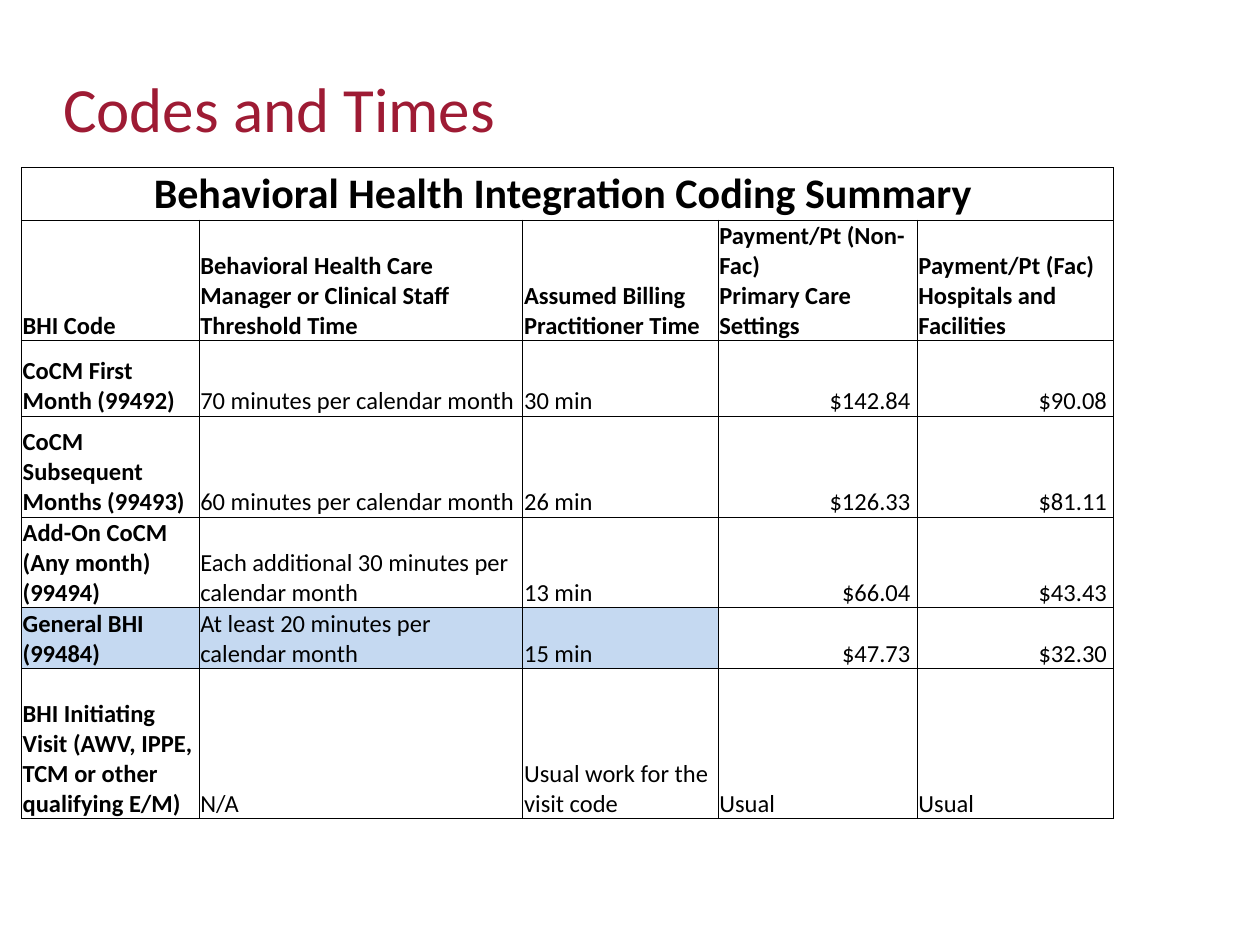
from dataclasses import dataclass

from lxml import etree
from pptx import Presentation
from pptx.dml.color import RGBColor
from pptx.enum import text
from pptx.oxml import ns
from pptx import util as u


@dataclass(frozen=True)
class Theme:
    font: str = "Calibri"
    title_color: str = "9E1B34"
    ink: str = "000000"
    highlight: str = "C5D9F1"
    title_size: int = 36
    caption_size: int = 24
    body_size: int = 14
    border: float = 0.5


THEME = Theme()
SLIDE_WIDTH, SLIDE_HEIGHT = 10, 7.5
TITLE_BOX = (0.5, 0.45, 9, 0.8)
TABLE_BOX = (0.17, 1.33, 8.67, 4.83)
COLUMN_WIDTHS = (1.41, 2.57, 1.55, 1.58, 1.56)
ROW_HEIGHTS = (0.35, 0.89, 0.6, 0.8, 0.6, 0.4, 1.19)
HIGHLIGHTED_CODE = "General BHI (99484)"

CAPTION = "Behavioral Health Integration Coding Summary "
HEADINGS = (
    "BHI Code",
    "Behavioral Health Care Manager or Clinical Staff Threshold Time",
    "Assumed Billing Practitioner Time",
    "Payment/Pt (Non-Fac) \vPrimary Care Settings",
    "Payment/Pt (Fac) \vHospitals and Facilities",
)
CODES = (
    ("CoCM First Month (99492)", "70 minutes per calendar month",
     "30 min", "$142.84 ", "$90.08 "),
    ("CoCM Subsequent Months (99493)", "60 minutes per calendar month",
     "26 min", "$126.33 ", "$81.11 "),
    ("Add-On CoCM (Any month) (99494)",
     "Each additional 30 minutes per calendar month",
     "13 min", "$66.04 ", "$43.43 "),
    (HIGHLIGHTED_CODE, "At least 20 minutes per calendar month",
     "15 min", "$47.73 ", "$32.30 "),
    ("BHI Initiating Visit (AWV, IPPE, TCM or other qualifying E/M)", "N/A",
     "Usual work for the visit code", "Usual", "Usual"),
)


def format_text(frame, size, color, bold=False, align=text.PP_ALIGN.LEFT):
    for para in frame.paragraphs:
        para.alignment = align
        for span in para.runs:
            span.font.name = THEME.font
            span.font.size = u.Pt(size)
            span.font.bold = bold
            span.font.color.rgb = RGBColor.from_string(color)


def add_borders(cell):
    properties = cell._tc.get_or_add_tcPr()
    for side in ("lnL", "lnR", "lnT", "lnB"):
        line = etree.SubElement(properties, ns.qn(f"a:{side}"),
                                w=str(u.Pt(THEME.border)))
        fill = etree.SubElement(line, ns.qn("a:solidFill"))
        etree.SubElement(fill, ns.qn("a:srgbClr"), val=THEME.ink)


def style_cell(cell, fill=None):
    cell.margin_left = cell.margin_right = cell.margin_top = u.Inches(0.01)
    cell.margin_bottom = 0
    cell.vertical_anchor = text.MSO_ANCHOR.BOTTOM
    add_borders(cell)
    if fill:
        cell.fill.solid()
        cell.fill.fore_color.rgb = RGBColor.from_string(fill)
    else:
        cell.fill.background()


def place_title(page, box):
    title = page.shapes.title
    title.left, title.top, title.width, title.height = map(u.Inches, box)
    frame = title.text_frame
    frame.text = "Codes and Times"
    frame.margin_left = frame.margin_right = 0
    frame.margin_top = frame.margin_bottom = 0
    frame.vertical_anchor = text.MSO_ANCHOR.MIDDLE
    format_text(frame, THEME.title_size, THEME.title_color)


def place_code_table(page, box):
    table = page.shapes.add_table(len(ROW_HEIGHTS), len(COLUMN_WIDTHS),
                                  *map(u.Inches, box)).table
    table.first_row = table.horz_banding = False
    for column, width in zip(table.columns, COLUMN_WIDTHS):
        column.width = u.Inches(width)
    for row, height in zip(table.rows, ROW_HEIGHTS):
        row.height = u.Inches(height)

    # Caption across all columns
    caption = table.cell(0, 0)
    caption.merge(table.cell(0, len(COLUMN_WIDTHS) - 1))
    for cell in table.rows[0].cells:
        style_cell(cell)
    caption.text_frame.text = CAPTION
    format_text(caption.text_frame, THEME.caption_size, THEME.ink, True,
                text.PP_ALIGN.CENTER)

    # Headings and codes: bold labels, amounts to the right
    for row, values in enumerate((HEADINGS, *CODES), start=1):
        for column, value in enumerate(values):
            cell = table.cell(row, column)
            marked = values[0] == HIGHLIGHTED_CODE and column < 3
            style_cell(cell, THEME.highlight if marked else None)
            cell.text_frame.text = value
            align = (text.PP_ALIGN.RIGHT if value.startswith("$")
                     else text.PP_ALIGN.LEFT)
            format_text(cell.text_frame, THEME.body_size, THEME.ink,
                        row == 1 or column == 0, align)


def main():
    deck = Presentation()
    deck.slide_width = u.Inches(SLIDE_WIDTH)
    deck.slide_height = u.Inches(SLIDE_HEIGHT)
    page = deck.slides.add_slide(deck.slide_layouts.get_by_name("Title Only"))
    place_title(page, TITLE_BOX)
    place_code_table(page, TABLE_BOX)
    deck.save("out.pptx")


if __name__ == "__main__":
    main()
